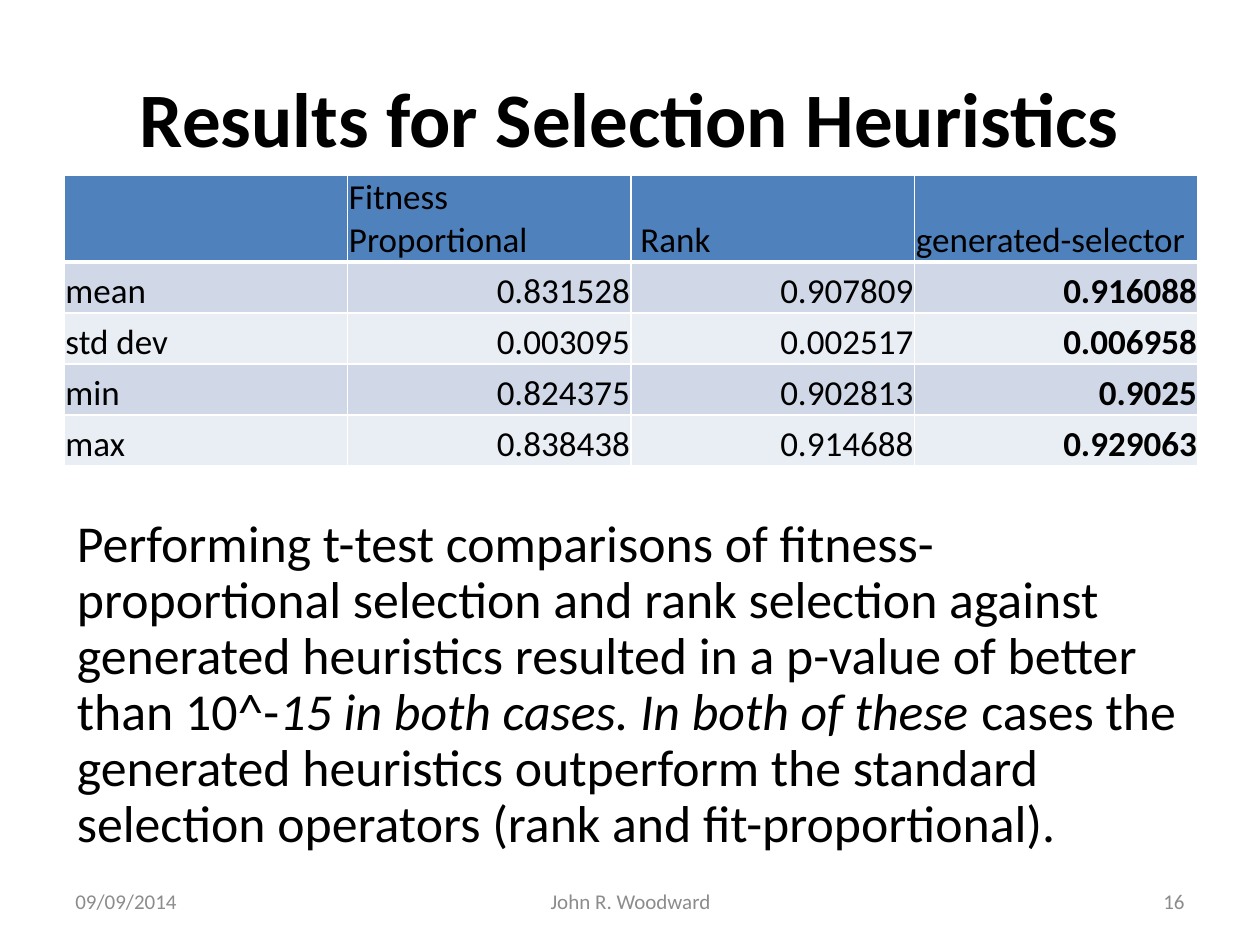
from lxml.etree import SubElement
from pptx import Presentation
from pptx.dml.color import RGBColor
from pptx.enum.text import MSO_ANCHOR, MSO_AUTO_SIZE, PP_ALIGN
from pptx.oxml.ns import qn
from pptx.util import Inches, Pt

# Content
TITLE = "Results for Selection Heuristics"
ROWS = [
    ("", "Fitness Proportional", " Rank", "generated-selector"),
    ("mean", "0.831528", "0.907809", "0.916088"),
    ("std dev", "0.003095", "0.002517", "0.006958"),
    ("min", "0.824375", "0.902813", "0.9025"),
    ("max", "0.838438", "0.914688", "0.929063"),
]
BODY = [  # text, italic
    ("Performing t-test comparisons of fitness-proportional selection and rank "
     "selection against generated heuristics resulted in a p-value of better than 10^-", False),
    ("15 in both cases. In both of these ", True),
    ("cases the generated heuristics outperform the standard selection operators "
     "(rank and fit-proportional).", False),
]
FOOTER = [  # text, left, width, alignment
    ("09/09/2014", 0.5, 2.33, PP_ALIGN.LEFT),
    ("John R. Woodward", 3.42, 3.17, PP_ALIGN.CENTER),
    ("16", 7.17, 2.33, PP_ALIGN.RIGHT),
]
THEME = {
    "font": "Calibri", "text": "000000", "muted": "8C8C8C", "border": "FFFFFF",
    "header": "4F81BD", "bands": ("D0D8E8", "E9EDF4"),
    "title_size": 44, "table_size": 20, "body_size": 29.6, "footer_size": 12,
}


def add_run(p, text, size, color=THEME["text"], bold=False, italic=False):
    r = p.add_run()
    r.text = text
    r.font.name, r.font.size = THEME["font"], Pt(size)
    r.font.bold, r.font.italic = bold, italic
    r.font.color.rgb = RGBColor.from_string(color)


def place(sp, left, top, width, height):
    sp.left, sp.top, sp.width, sp.height = map(Inches, (left, top, width, height))


def add_border(cell, side, width):
    ln = SubElement(cell._tc.get_or_add_tcPr(), qn(f"a:ln{side}"), w=str(Pt(width)))
    fill = SubElement(ln, qn("a:solidFill"))
    SubElement(fill, qn("a:srgbClr"), val=THEME["border"])


prs = Presentation()
prs.slide_width, prs.slide_height = Inches(10), Inches(7.5)
s = prs.slides.add_slide(prs.slide_layouts[1])
title, body = s.placeholders

# Title
place(title, 0.5, 0.3, 9, 1.25)
tf = title.text_frame
tf.vertical_anchor = MSO_ANCHOR.MIDDLE
tf.auto_size = MSO_AUTO_SIZE.NONE
p = tf.paragraphs[0]
p.alignment = PP_ALIGN.CENTER
add_run(p, TITLE, THEME["title_size"], bold=True)

# Results table
table = s.shapes.add_table(len(ROWS), len(ROWS[0]), Inches(0.51), Inches(1.39),
                           Inches(9), Inches(2.3)).table
for i, row in enumerate(ROWS):
    table.rows[i].height = Inches(0.68 if i == 0 else 0.405)
    for j, text in enumerate(row):
        cell = table.cell(i, j)
        cell.margin_left = cell.margin_right = cell.margin_top = Inches(0.01)
        cell.margin_bottom = 0
        cell.vertical_anchor = MSO_ANCHOR.BOTTOM
        for side in "LRTB":
            under_header = (i, side) in ((0, "B"), (1, "T"))
            add_border(cell, side, 3 if under_header else 1)
        cell.fill.solid()
        color = THEME["bands"][(i - 1) % 2] if i else THEME["header"]
        cell.fill.fore_color.rgb = RGBColor.from_string(color)
        is_value = i > 0 and j > 0
        p = cell.text_frame.paragraphs[0]
        p.alignment = PP_ALIGN.RIGHT if is_value else PP_ALIGN.LEFT
        if text:
            add_run(p, text, THEME["table_size"], bold=is_value and j == len(row) - 1)

# Conclusion, without bullet
place(body, 0.51, 4.06, 9, 2.87)
tf = body.text_frame
tf.auto_size = MSO_AUTO_SIZE.NONE
p = tf.paragraphs[0]
p.line_spacing = 0.9
p.space_before = Pt(THEME["body_size"] * 0.2)
pPr = p._p.get_or_add_pPr()
pPr.set("marL", "0")
pPr.set("indent", "0")
SubElement(pPr, qn("a:buNone"))
for text, italic in BODY:
    add_run(p, text, THEME["body_size"], italic=italic)

# Footer
for text, left, width, align in FOOTER:
    tf = s.shapes.add_textbox(Inches(left), Inches(6.95), Inches(width), Inches(0.4)).text_frame
    tf.word_wrap = True
    tf.vertical_anchor = MSO_ANCHOR.MIDDLE
    p = tf.paragraphs[0]
    p.alignment = align
    add_run(p, text, THEME["footer_size"], THEME["muted"])

prs.save("out.pptx")
